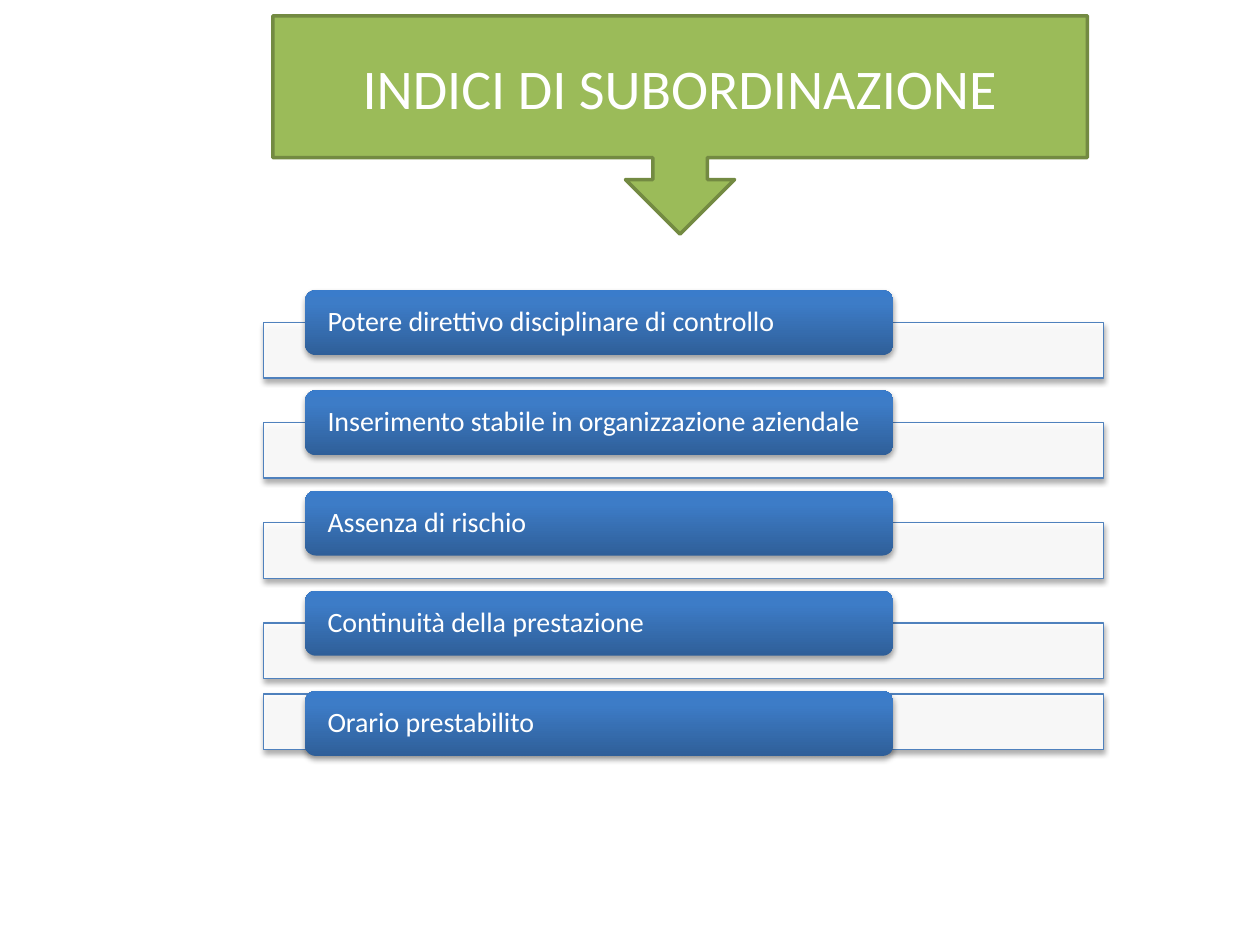
from lxml.etree import SubElement as Sub
from pptx import Presentation
from pptx.dml.color import RGBColor as RGB
from pptx.enum.shapes import MSO_SHAPE as Kind
from pptx.enum.text import MSO_ANCHOR as Anchor, PP_ALIGN as Align
from pptx.oxml.ns import qn
from pptx.util import Cm, Pt

WHITE = RGB(0xFF, 0xFF, 0xFF)
BLACK = RGB(0x00, 0x00, 0x00)
GREEN = RGB(0x9B, 0xBB, 0x59)
MOSS = RGB(0x73, 0x8A, 0x42)
BLUE = RGB(0x4F, 0x81, 0xBD)
SHADES = [(0, RGB(0x2F, 0x5F, 0x99)), (80, RGB(0x3D, 0x7C, 0xC7)),
          (100, RGB(0x3A, 0x7C, 0xCB))]

ITEMS = ["Potere direttivo disciplinare di controllo",
         "Inserimento stabile in organizzazione aziendale",
         "Assenza di rischio",
         "Continuità della prestazione",
         "Orario prestabilito"]
TOP, STEP = 5.85, 2.02
DROP, LAST_DROP = 0.65, 0.06  # how far each bar starts below its tab


def tint(node, color, alpha=100):
    """Add an RGB colour, with its opacity in percent, to an XML node."""
    clr = Sub(node, qn("a:srgbClr"), val=str(color))
    if alpha < 100:
        Sub(clr, qn("a:alpha"), val=str(alpha * 1000))


def write(shape, text, size=16, align=Align.LEFT, inset=0.0, space=1.0):
    frame = shape.text_frame
    frame.word_wrap = True
    frame.vertical_anchor = Anchor.MIDDLE
    frame.margin_left = frame.margin_right = Cm(inset)
    frame.margin_top = frame.margin_bottom = 0
    par = frame.paragraphs[0]
    par.alignment, par.line_spacing = align, space
    run = par.add_run()
    run.text = text
    font = run.font
    font.name, font.size, font.color.rgb = "Calibri", Pt(size), WHITE


class Deck:
    """Holds the style and the current slide."""

    def __init__(self):
        self.prs = Presentation()
        self.prs.slide_width, self.prs.slide_height = Cm(25.4), Cm(19.05)
        self.slide = self.prs.slides.add_slide(self.prs.slide_layouts[5])

    def shape(self, kind, box, fill=None, line=None, width=1):
        item = self.slide.shapes.add_shape(kind, *map(Cm, box))
        item.shadow.inherit = False
        if fill is not None:
            item.fill.solid()
            item.fill.fore_color.rgb = fill
        if line is None:
            item.line.fill.background()
        else:
            item.line.color.rgb = line
            item.line.width = Pt(width)
        return item

    def shade(self, item):
        """Cast a soft shadow straight down."""
        effects = item._element.spPr.find(qn("a:effectLst"))
        cast = Sub(effects, qn("a:outerShdw"), blurRad="40000", dist="23000",
                   dir="5400000", rotWithShape="0")
        tint(cast, BLACK, 35)

    def title(self, text, left, top, width, height):
        self.shape(Kind.DOWN_ARROW_CALLOUT, (left, top, width, height),
                   GREEN, MOSS, 2)
        head = self.slide.shapes.title
        head.left, head.top, head.width = Cm(left), Cm(top), Cm(width)
        head.height = Cm(round(height * 0.65, 2))  # the box above the arrow
        write(head, text, size=32, align=Align.CENTER)
        # the placeholder lies first in the tree: bring it to the front
        self.slide.shapes._spTree.append(head._element)

    def bar(self, top):
        item = self.shape(Kind.RECTANGLE, (5.31, top, 16.93, 1.12),
                          WHITE, BLUE, 0.75)
        solid = item._element.spPr.find(qn("a:solidFill"))
        solid.remove(solid[0])
        tint(solid, WHITE, 90)
        self.shade(item)

    def tab(self, text, top):
        item = self.shape(Kind.ROUNDED_RECTANGLE, (6.15, top, 11.86, 1.31))
        item.fill.gradient()
        grad = item._element.spPr.find(qn("a:gradFill"))
        stops = grad.find(qn("a:gsLst"))
        for old in list(stops):
            stops.remove(old)
        for pos, color in SHADES:
            tint(Sub(stops, qn("a:gs"), pos=str(pos * 1000)), color)
        grad.find(qn("a:lin")).set("ang", "16200000")
        self.shade(item)
        write(item, text, inset=0.39, space=0.9)


def main():
    deck = Deck()
    deck.title("INDICI DI SUBORDINAZIONE", 5.5, 0.32, 16.42, 4.4)
    for i, text in enumerate(ITEMS):
        top = TOP + i * STEP
        deck.bar(top + (LAST_DROP if text == ITEMS[-1] else DROP))
        deck.tab(text, top)
    deck.prs.save("out.pptx")


if __name__ == "__main__":
    main()
